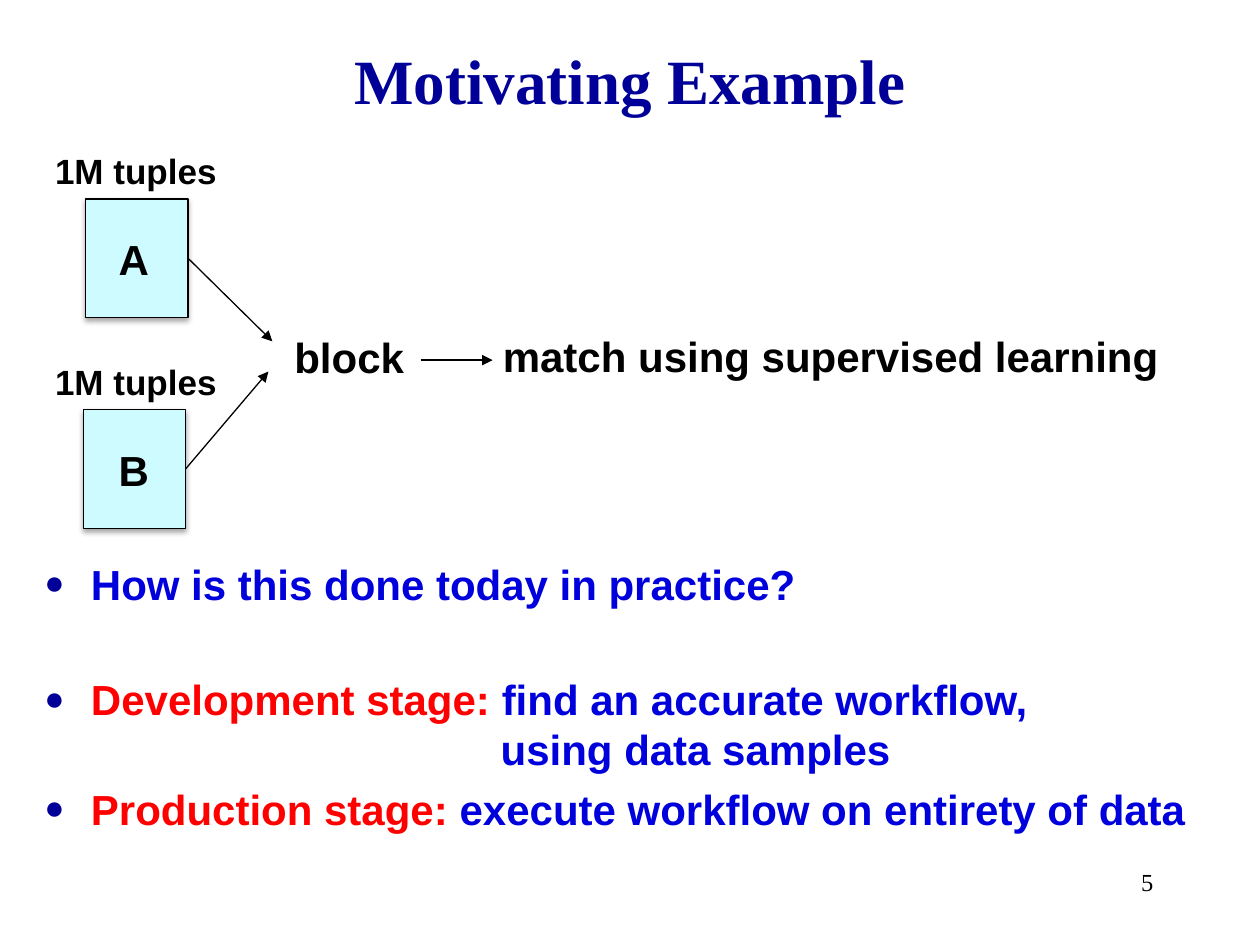
from dataclasses import dataclass

from lxml.etree import SubElement
from pptx import Presentation
from pptx.dml.color import RGBColor
from pptx.enum.shapes import MSO_CONNECTOR, MSO_SHAPE
from pptx.enum.text import MSO_ANCHOR, MSO_AUTO_SIZE, PP_ALIGN
from pptx.oxml import parse_xml
from pptx.oxml.ns import nsdecls, qn
from pptx.util import Cm, Pt


@dataclass(frozen=True)
class Theme:
    heading_font: str = "Times New Roman"
    body_font: str = "Arial"
    navy: str = "000099"
    blue: str = "0000DC"
    red: str = "FF0000"
    black: str = "000000"
    table_fill: str = "CDFBFF"
    title_size: int = 36
    body_size: int = 24
    label_size: int = 20
    number_size: int = 14


theme = Theme()


def add_run(paragraph, text, size, color, font=theme.body_font, bold=True):
    run = paragraph.add_run()
    run.text = text
    run.font.name = font
    run.font.size = Pt(size)
    run.font.bold = bold
    run.font.color.rgb = RGBColor.from_string(color)


def add_label(shapes, text, left, top, width, height, size=theme.body_size):
    """Add a centred bold text box and return it."""
    label = shapes.add_textbox(Cm(left), Cm(top), Cm(width), Cm(height))
    label.text_frame.word_wrap = True
    paragraph = label.text_frame.paragraphs[0]
    paragraph.alignment = PP_ALIGN.CENTER
    add_run(paragraph, text, size, theme.black)
    return label


presentation = Presentation()
presentation.slide_width = Cm(25.4)
presentation.slide_height = Cm(19.05)
slide = presentation.slides.add_slide(presentation.slide_layouts[1])
shapes = slide.shapes

# Title
title = shapes.title
title.left, title.top, title.width, title.height = Cm(1.9), Cm(0.64), Cm(21.6), Cm(1.9)
title.text_frame.auto_size = MSO_AUTO_SIZE.NONE
title.text_frame.vertical_anchor = MSO_ANCHOR.MIDDLE
paragraph = title.text_frame.paragraphs[0]
paragraph.alignment = PP_ALIGN.CENTER
add_run(paragraph, "Motivating Example", theme.title_size, theme.navy, theme.heading_font)

# Bullet list: (has bullet, indent in cm, space before in points, runs)
text_indent = 0.94
bullet_items = [
    (True, text_indent, 5, [("How is this done today in practice?", theme.blue)]),
    (True, text_indent, 37, [("Development stage: ", theme.red),
                             ("find an accurate workflow,", theme.blue)]),
    (False, 9.2, 0, [("using data samples", theme.blue)]),
    (True, text_indent, 5, [("Production stage: ", theme.red),
                            ("execute workflow on entirety of data", theme.blue)]),
]
body = slide.placeholders[1]
body.left, body.top, body.width, body.height = Cm(0.64), Cm(11.13), Cm(24.13), Cm(6.5)
body.text_frame.auto_size = MSO_AUTO_SIZE.NONE
for index, (has_bullet, indent, space_before, runs) in enumerate(bullet_items):
    paragraph = body.text_frame.paragraphs[0] if index == 0 else body.text_frame.add_paragraph()
    paragraph.space_before = Pt(space_before)
    properties = paragraph._p.get_or_add_pPr()
    properties.set("marL", str(Cm(indent)))
    properties.set("indent", str(-Cm(indent) if has_bullet else 0))
    if has_bullet:
        bullet_color = SubElement(properties, qn("a:buClr"))
        SubElement(bullet_color, qn("a:srgbClr"), val=theme.navy)
        SubElement(properties, qn("a:buSzPct"), val="80000")
        SubElement(properties, qn("a:buFont"), typeface=theme.heading_font)
        SubElement(properties, qn("a:buChar"), char="●")
    else:
        SubElement(properties, qn("a:buNone"))
    for text, color in runs:
        add_run(paragraph, text, theme.body_size, color)

# Slide number
number = shapes.add_textbox(Cm(18.2), Cm(17.35), Cm(5.3), Cm(1.27))
number.text_frame.word_wrap = True
paragraph = number.text_frame.paragraphs[0]
paragraph.alignment = PP_ALIGN.RIGHT
add_run(paragraph, "5", theme.number_size, theme.black, theme.heading_font, bold=False)

# Input tables with their captions
tables = []
for name, left, top in [("A", 1.73, 4.01), ("B", 1.68, 8.26)]:
    table = shapes.add_shape(MSO_SHAPE.RECTANGLE, Cm(left), Cm(top), Cm(2.06), Cm(2.39))
    table.fill.solid()
    table.fill.fore_color.rgb = RGBColor.from_string(theme.table_fill)
    table.line.color.rgb = RGBColor.from_string(theme.black)
    table.line.width = Pt(0.75)
    table._element.spPr.append(parse_xml(
        f'<a:effectLst {nsdecls("a")}><a:outerShdw blurRad="{Pt(3.1)}" dist="{Pt(1.8)}" '
        f'dir="5400000" rotWithShape="0"><a:srgbClr val="{theme.black}">'
        '<a:alpha val="35000"/></a:srgbClr></a:outerShdw></a:effectLst>'))
    letter = add_label(shapes, name, 1.96, top + 0.57, 1.47, 1.27)
    letter.fill.solid()
    letter.fill.fore_color.rgb = RGBColor.from_string(theme.table_fill)
    add_label(shapes, "1M tuples", 0.58, top - 1.12, 4.32, 1.12, theme.label_size)
    tables.append(table)

# Workflow steps
add_label(shapes, "block", 4.88, 6.55, 4.32, 1.27)
add_label(shapes, "match using supervised learning ", 8.76, 6.53, 16.21, 1.27)

# Arrows: (source table, start, end)
table_a, table_b = tables
arrows = [
    (table_a, (3.79, 5.21), (5.49, 6.88)),
    (table_b, (3.74, 9.45), (5.41, 7.49)),
    (None, (8.48, 7.26), (9.93, 7.26)),
]
for source, start, end in arrows:
    arrow = shapes.add_connector(MSO_CONNECTOR.STRAIGHT, *map(Cm, start + end))
    if source is not None:
        arrow.begin_connect(source, 3)
    arrow.line.color.rgb = RGBColor.from_string(theme.black)
    arrow.line.width = Pt(0.75)
    SubElement(arrow.line._get_or_add_ln(), qn("a:tailEnd"), type="triangle")
    SubElement(arrow._element.spPr, qn("a:effectLst"))

presentation.save("out.pptx")
